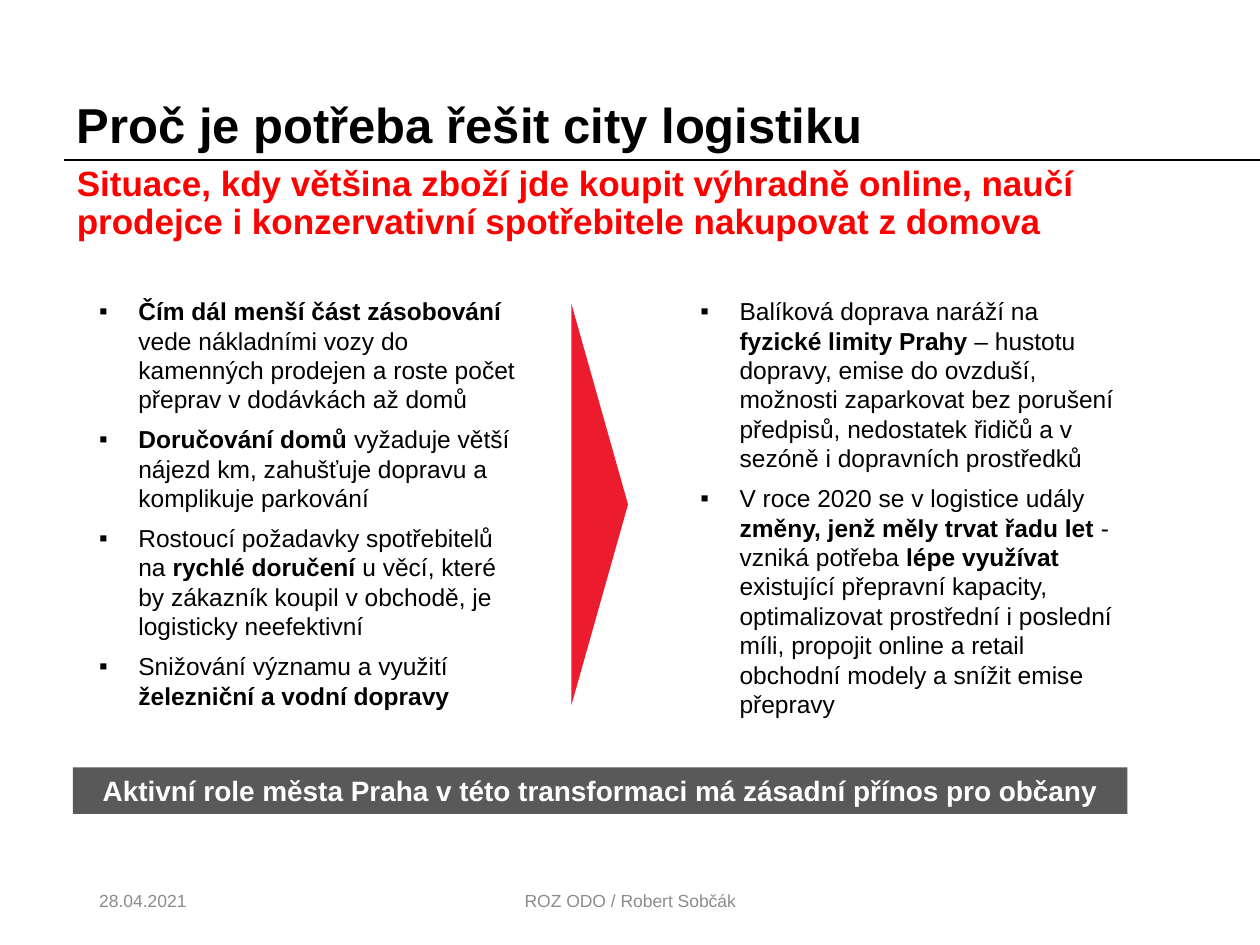
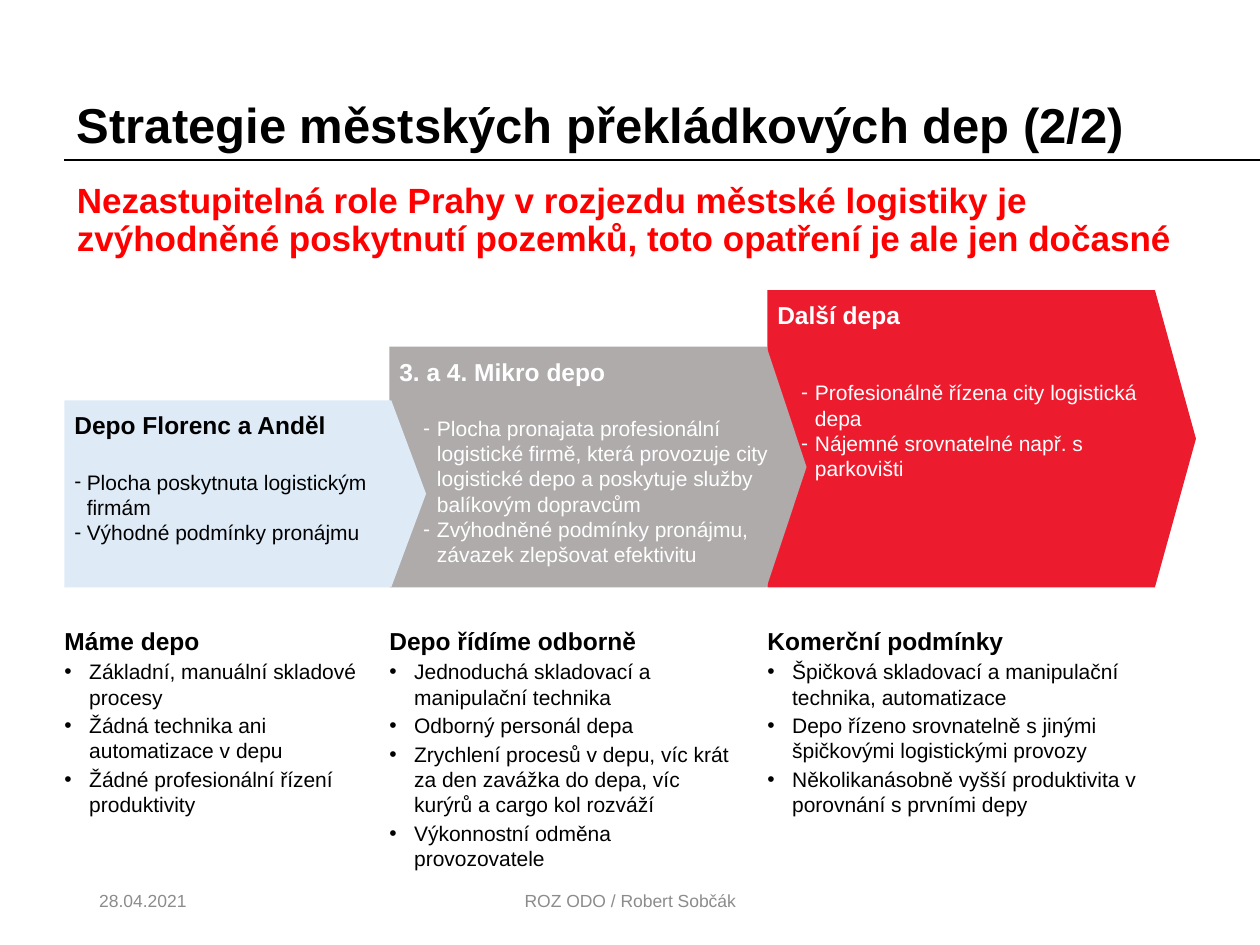
from dataclasses import dataclass

from lxml import etree
from pptx import Presentation
from pptx.dml.color import RGBColor
from pptx.enum import shapes, text
from pptx.oxml import ns
from pptx.util import Cm, Pt

FONT = "Arial"
BLACK, WHITE = "000000", "FFFFFF"
HEADLINE_RED, BRAND_RED = "FF0000", "ED1B2E"
FOOTER_GREY, BAR_GREY = "8C8C8C", "595959"
LEFT, RULE_Y, WIDE = 1.3, 3.23, 22.8
DEFAULT_INSETS = (0.25, 0.13)


@dataclass(frozen=True)
class Box:
    left: float
    top: float
    width: float
    height: float

    def emu(self) -> tuple:
        return Cm(self.left), Cm(self.top), Cm(self.width), Cm(self.height)


@dataclass(frozen=True)
class Style:
    size: float
    color: str = BLACK
    bold: bool = False
    align: text.PP_ALIGN = text.PP_ALIGN.LEFT
    line: float = 1.0
    before: float = 0
    after: float = 0
    bullet: str = ""
    margin: float = 0
    hang: float = 0


@dataclass(frozen=True)
class Para:
    text: str
    style: Style
    before: float | None = None


@dataclass(frozen=True)
class Stage:
    left: float
    arrow_width: float
    arrow_height: float
    point: float
    fill: str
    color: str
    name: str
    gap: float
    margin: float
    hang: float
    features: tuple[str, ...]
    text_width: float
    result: str
    details: tuple[str, ...]


TITLE = Style(28, bold=True, line=0.9)
HEADLINE = Style(20, HEADLINE_RED, bold=True, line=0.9)
FOOTER = Style(10, FOOTER_GREY)
FOOTER_CENTER = Style(10, FOOTER_GREY, align=text.PP_ALIGN.CENTER)
ARGUMENT = Style(14, before=6, bullet="▪", margin=1.27, hang=0.79)
BAR = Style(16, WHITE, bold=True, align=text.PP_ALIGN.CENTER)
RESULT = Style(14, bold=True, after=1)
DETAIL = Style(12, before=1, after=1, bullet="•", margin=0.5, hang=0.5)

ARGUMENTS = {
    1.27: (
        "*Čím dál menší část zásobování *vede nákladními vozy do kamenných "
        "prodejen a roste počet přeprav v dodávkách až domů",
        "*Doručování domů *vyžaduje větší nájezd km, zahušťuje dopravu a "
        "komplikuje parkování",
        "Rostoucí požadavky spotřebitelů na *rychlé doručení *u věcí, které by "
        "zákazník koupil v obchodě, je logisticky neefektivní",
        "Snižování významu a využití *železniční a vodní dopravy*",
    ),
    13.39: (
        "Balíková doprava naráží na *fyzické limity Prahy *– hustotu dopravy, "
        "emise do ovzduší, možnosti zaparkovat bez porušení předpisů, "
        "nedostatek řidičů a v sezóně i dopravních prostředků",
        "V roce 2020 se v logistice udály *změny, jenž měly trvat řadu let *"
        "- vzniká potřeba *lépe využívat *existující přepravní kapacity, "
        "optimalizovat prostřední i poslední míli, propojit online a retail "
        "obchodní modely a snížit emise přepravy",
    ),
}

STAGES = (
    Stage(
        LEFT, 7.29, 3.77, 0.186, "DEEBF7", BLACK,
        "Depo Florenc a Anděl", 16.8, 0.25, 0.25,
        ("Plocha poskytnuta logistickým firmám", "Výhodné podmínky pronájmu"),
        6.55, "Máme depo",
        ("Základní, manuální skladové procesy",
         "Žádná technika ani automatizace v depu",
         "Žádné profesionální řízení produktivity"),
    ),
    Stage(
        7.85, 8.41, 4.85, 0.166, "AFABAB", WHITE,
        "3. a 4. Mikro depo", 16.8, 0.76, 0.28,
        ("Plocha pronajata profesionální logistické firmě, která provozuje "
         "city logistické depo a poskytuje služby balíkovým dopravcům",
         "Zvýhodněné podmínky pronájmu, závazek zlepšovat efektivitu"),
        7.14, "Depo řídíme odborně",
        ("Jednoduchá skladovací a manipulační technika",
         "Odborný personál depa",
         "Zrychlení procesů v depu, víc krát za den zavážka do depa, víc "
         "kurýrů a cargo kol rozváží",
         "Výkonnostní odměna provozovatele"),
    ),
    Stage(
        15.47, 8.64, 5.99, 0.138, BRAND_RED, WHITE,
        "Další depa", 28.8, 0.76, 0.28,
        ("Profesionálně řízena city logistická depa",
         "Nájemné srovnatelné např. s parkovišti"),
        8.05, "Komerční podmínky",
        ("Špičková skladovací a manipulační technika, automatizace",
         "Depo řízeno srovnatelně s jinými špičkovými logistickými provozy",
         "Několikanásobně vyšší produktivita v porovnání s prvními depy"),
    ),
)
ARROW_BOTTOM, RESULT_TOP, RESULT_HEIGHT = 11.84, 12.62, 5.79


def rgb(value: str) -> RGBColor:
    return RGBColor.from_string(value)


def add_bullet(p, style: Style) -> None:
    pPr = p._p.get_or_add_pPr()
    pPr.set("marL", str(Cm(style.margin)))
    pPr.set("indent", str(-Cm(style.hang)))
    etree.SubElement(pPr, ns.qn("a:buFont")).set("typeface", FONT)
    etree.SubElement(pPr, ns.qn("a:buChar")).set("char", style.bullet)


def write(sp, paras: list[Para], insets: tuple[float, float] = DEFAULT_INSETS,
          anchor: text.MSO_ANCHOR = text.MSO_ANCHOR.TOP) -> None:
    tf = sp.text_frame
    tf.word_wrap = True
    tf.vertical_anchor = anchor
    tf.margin_left = tf.margin_right = Cm(insets[0])
    tf.margin_top = tf.margin_bottom = Cm(insets[1])
    for i, para in enumerate(paras):
        style = para.style
        p = tf.add_paragraph() if i else tf.paragraphs[0]
        if style.bullet:
            add_bullet(p, style)
        p.alignment = style.align
        p.line_spacing = style.line
        before = style.before if para.before is None else para.before
        p.space_before = Pt(before if i else 0)
        p.space_after = Pt(style.after)
        for j, part in enumerate(para.text.split("*")):
            if part:
                r = p.add_run()
                r.text = part
                r.font.name = FONT
                r.font.size = Pt(style.size)
                r.font.bold = style.bold or j % 2 == 1
                r.font.color.rgb = rgb(style.color)


def add_text(s, box: Box, paras: list[Para], **layout) -> None:
    write(s.shapes.add_textbox(*box.emu()), paras, **layout)


def add_filled(s, kind: shapes.MSO_SHAPE, box: Box, fill: str):
    sp = s.shapes.add_shape(kind, *box.emu())
    sp.shadow.inherit = False
    sp.fill.solid()
    sp.fill.fore_color.rgb = rgb(fill)
    sp.line.fill.background()
    return sp


def add_framed_slide(prs, title: str, headline: str, headline_top: float):
    s = prs.slides.add_slide(prs.slide_layouts[6])
    rule = s.shapes.add_connector(shapes.MSO_CONNECTOR.STRAIGHT, Cm(LEFT),
                                  Cm(RULE_Y), prs.slide_width, Cm(RULE_Y))
    rule.line.color.rgb = rgb(BLACK)
    rule.line.width = Pt(1)
    etree.SubElement(rule._element.spPr, ns.qn("a:effectLst"))
    add_text(s, Box(LEFT, 0, WIDE, RULE_Y), [Para(title, TITLE)],
             anchor=text.MSO_ANCHOR.BOTTOM)
    add_text(s, Box(LEFT, headline_top, WIDE, 1.8), [Para(headline, HEADLINE)])
    for left, width, words, style in (
        (1.75, 5.72, "28.04.2021", FOOTER),
        (8.41, 8.59, "ROZ ODO / Robert Sobčák", FOOTER_CENTER),
    ):
        add_text(s, Box(left, 17.65, width, 1.02), [Para(words, style)],
                 anchor=text.MSO_ANCHOR.MIDDLE)
    return s


def add_reasons_slide(prs) -> None:
    s = add_framed_slide(
        prs, "Proč je potřeba řešit city logistiku",
        "Situace, kdy většina zboží jde koupit výhradně online, naučí prodejce "
        "i konzervativní spotřebitele nakupovat z domova", RULE_Y)
    for left, arguments in ARGUMENTS.items():
        add_text(s, Box(left, 5.84, 9.55, 9.32),
                 [Para(words, ARGUMENT) for words in arguments])
    pointer = add_filled(s, shapes.MSO_SHAPE.ISOSCELES_TRIANGLE,
                         Box(8.05, 9.6, 8.08, 1.14), BRAND_RED)
    pointer.rotation = 90
    bar = add_filled(s, shapes.MSO_SHAPE.RECTANGLE,
                     Box(1.47, 15.47, 21.26, 0.94), BAR_GREY)
    write(bar, [Para("Aktivní role města Praha v této transformaci má zásadní "
                     "přínos pro občany", BAR)])


def add_stage(s, stage: Stage) -> None:
    box = Box(stage.left, ARROW_BOTTOM - stage.arrow_height,
              stage.arrow_width, stage.arrow_height)
    arrow = add_filled(s, shapes.MSO_SHAPE.PENTAGON, box, stage.fill)
    arrow.adjustments[0] = stage.point
    feature = Style(12, stage.color, bullet="-", margin=stage.margin,
                    hang=stage.hang)
    write(arrow,
          [Para(stage.name, Style(14, stage.color, bold=True))]
          + [Para(words, feature, 0 if i else stage.gap)
             for i, words in enumerate(stage.features)],
          insets=(0.2, 0.2))
    add_text(s, Box(stage.left, RESULT_TOP, stage.text_width, RESULT_HEIGHT),
             [Para(stage.result, RESULT)]
             + [Para(words, DETAIL) for words in stage.details],
             insets=(0, 0))


def add_strategy_slide(prs) -> None:
    s = add_framed_slide(
        prs, "Strategie městských překládkových dep (2/2)",
        "Nezastupitelná role Prahy v rozjezdu městské logistiky je zvýhodněné "
        "poskytnutí pozemků, toto opatření je ale jen dočasné", 3.56)
    for stage in reversed(STAGES):
        add_stage(s, stage)


def main() -> None:
    prs = Presentation()
    prs.slide_width, prs.slide_height = Cm(25.4), Cm(19.05)
    add_reasons_slide(prs)
    add_strategy_slide(prs)
    prs.save("out.pptx")


if __name__ == "__main__":
    main()
